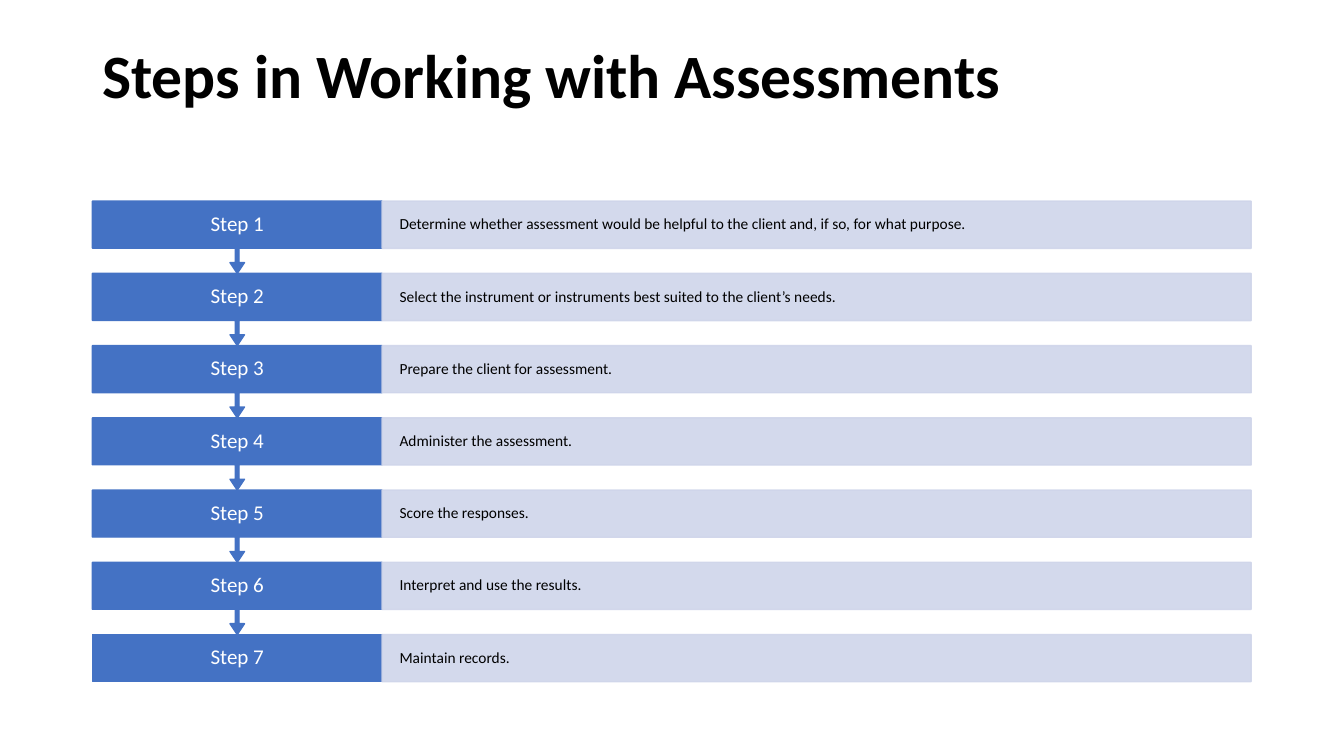
from lxml.etree import SubElement
from pptx import Presentation
from pptx.dml.color import RGBColor
from pptx.enum.shapes import MSO_SHAPE
from pptx.enum.text import MSO_ANCHOR, PP_ALIGN
from pptx.oxml.ns import qn
from pptx.util import Cm, Pt

COLORS = {"step": "4472C4", "detail": "CFD5EA", "dark": "000000", "light": "FFFFFF"}

STEPS = [
    "Determine whether assessment would be helpful to the client and, if so, for what purpose.",
    "Select the instrument or instruments best suited to the client’s needs.",
    "Prepare the client for assessment.",
    "Administer the assessment.",
    "Score the responses.",
    "Interpret and use the results.",
    "Maintain records.",
]
LEFT, TOP, PITCH = 2.33, 5.07, 1.82
STEP_WIDTH, DETAIL_WIDTH, BAR_HEIGHT = 7.3, 21.9, 1.19


class StepSlide:
    font_name = "Calibri"

    def __init__(self, slide):
        self.slide = slide

    def color(self, name):
        return RGBColor.from_string(COLORS[name])

    def add_text(self, shape, text, size, color, align=PP_ALIGN.LEFT, bold=False,
                 anchor=MSO_ANCHOR.MIDDLE, side=0.25, edge=0.13):
        frame = shape.text_frame
        frame_format = {
            "word_wrap": True, "vertical_anchor": anchor,
            "margin_left": Cm(side), "margin_right": Cm(side),
            "margin_top": Cm(edge), "margin_bottom": Cm(edge),
        }
        for name, value in frame_format.items():
            setattr(frame, name, value)
        paragraph = frame.paragraphs[0]
        paragraph.alignment = align
        paragraph.line_spacing = 0.9
        run = paragraph.add_run()
        run.text = text
        run_format = {"name": self.font_name, "size": Pt(size), "bold": bold}
        for name, value in run_format.items():
            setattr(run.font, name, value)
        run.font.color.rgb = self.color(color)

    def title(self, text, left, top, width, height):
        heading = self.slide.shapes.add_textbox(Cm(left), Cm(top), Cm(width), Cm(height))
        self.add_text(heading, text, 44, "dark", bold=True, anchor=MSO_ANCHOR.TOP)

    def bar(self, kind, color, left, top, width, height):
        bar = self.slide.shapes.add_shape(kind, Cm(left), Cm(top), Cm(width), Cm(height))
        bar.shadow.inherit = False
        bar.line.width = Pt(1)
        for paint in (bar.fill, bar.line.fill):
            paint.solid()
            paint.fore_color.rgb = self.color(color)
        return bar

    def step(self, label, top, has_next):
        kind = MSO_SHAPE.DOWN_ARROW_CALLOUT if has_next else MSO_SHAPE.RECTANGLE
        height = PITCH if has_next else BAR_HEIGHT
        step = self.bar(kind, "step", LEFT, top, STEP_WIDTH, height)
        if has_next:
            for index, value in enumerate((0.05, 0.1, 0.15, 0.65)):
                step.adjustments[index] = value
        self.add_text(step, label, 15, "light", PP_ALIGN.CENTER, side=0.52, edge=0.3)

    def detail(self, text, top):
        detail = self.bar(MSO_SHAPE.RECTANGLE, "detail", LEFT + STEP_WIDTH, top,
                          DETAIL_WIDTH, BAR_HEIGHT)
        for tint in detail.element.spPr.iter(qn("a:srgbClr")):
            SubElement(tint, qn("a:alpha"), val="90000")
        self.add_text(detail, text, 11, "dark", side=0.44, edge=0.38)


def main():
    deck = Presentation()
    deck.slide_width, deck.slide_height = Cm(33.87), Cm(19.05)
    page = StepSlide(deck.slides.add_slide(deck.slide_layouts[6]))
    page.title("Steps in Working with Assessments", LEFT, 1.01, 29.21, 3.68)
    for number, text in reversed(list(enumerate(STEPS, 1))):
        top = TOP + (number - 1) * PITCH
        page.step(f"Step {number}", top, number < len(STEPS))
        page.detail(text, top)
    deck.save("out.pptx")


if __name__ == "__main__":
    main()
